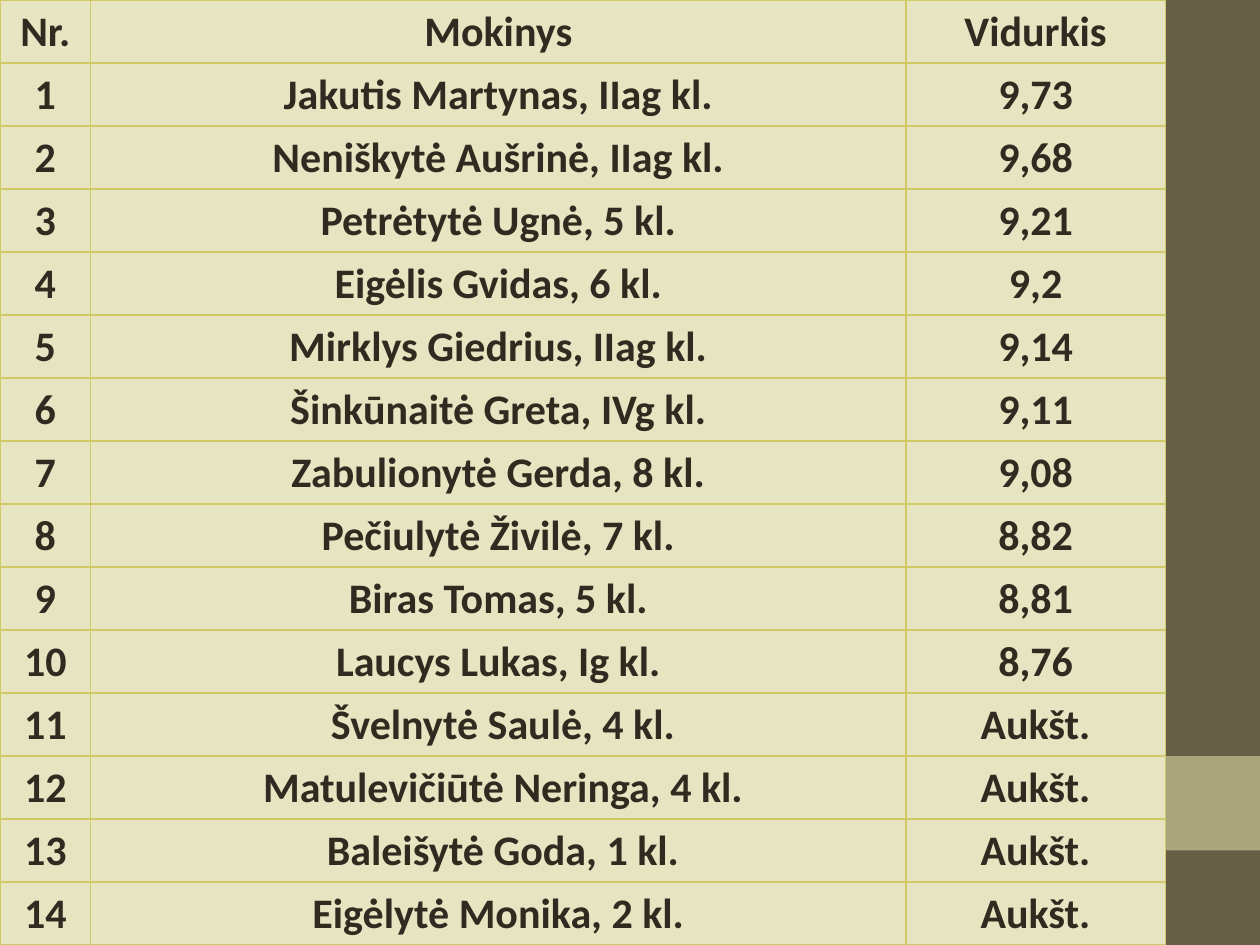
from lxml import etree
from pptx import Presentation
from pptx.dml.color import RGBColor
from pptx.enum.shapes import MSO_SHAPE
from pptx.enum.text import MSO_ANCHOR, PP_ALIGN
from pptx.oxml.ns import qn
from pptx.util import Inches, Pt

RECTANGLE = MSO_SHAPE.RECTANGLE
MIDDLE = MSO_ANCHOR.MIDDLE
CENTER = PP_ALIGN.CENTER

SLIDE_WIDTH, SLIDE_HEIGHT = 10, 7.5
BAND_WIDTH = 0.75
TABLE_WIDTH = SLIDE_WIDTH - BAND_WIDTH
COLUMN_WIDTHS = (0.72, 6.47, 2.06)

BAND, ACCENT = "675E47", "A9A57C"
CELL, GRID, INK = "E7E4C1", "D0C967", "2F2B20"

HEADINGS = ("Nr.", "Mokinys", "Vidurkis")
PUPILS = (
    ("Jakutis Martynas, IIag kl.", "9,73"),
    ("Neniškytė Aušrinė, IIag kl.", "9,68"),
    ("Petrėtytė Ugnė, 5 kl.", "9,21"),
    ("Eigėlis Gvidas, 6 kl.", "9,2"),
    ("Mirklys Giedrius, IIag kl.", "9,14"),
    ("Šinkūnaitė Greta, IVg kl.", "9,11"),
    ("Zabulionytė Gerda, 8 kl.", "9,08"),
    ("Pečiulytė Živilė, 7 kl.", "8,82"),
    ("Biras Tomas, 5 kl.", "8,81"),
    ("Laucys Lukas, Ig kl.", "8,76"),
    (" Švelnytė Saulė, 4 kl.", "Aukšt."),
    (" Matulevičiūtė Neringa, 4 kl.", "Aukšt."),
    (" Baleišytė Goda, 1 kl.", "Aukšt."),
    ("Eigėlytė Monika, 2 kl.", "Aukšt."),
)


def paint(fill, color):
    fill.solid()
    fill.fore_color.rgb = RGBColor.from_string(color)


def add_band(slide, top, height, color):
    band = slide.shapes.add_shape(
        RECTANGLE, Inches(TABLE_WIDTH), Inches(top), Inches(BAND_WIDTH), Inches(height))
    band.shadow.inherit = False
    band.line.fill.background()
    paint(band.fill, color)


def add_borders(cell, color, width):
    properties = cell._tc.get_or_add_tcPr()
    # Borders come before the fill in the cell properties
    for position, side in enumerate(("lnL", "lnR", "lnT", "lnB")):
        border = etree.Element(qn(f"a:{side}"), w=str(Pt(width)))
        solid = etree.SubElement(border, qn("a:solidFill"))
        etree.SubElement(solid, qn("a:srgbClr"), val=color)
        properties.insert(position, border)


def fill_cell(cell, text):
    cell.margin_left = cell.margin_right = cell.margin_top = Inches(0.01)
    cell.margin_bottom = 0
    cell.vertical_anchor = MIDDLE
    cell.text_frame.text = text
    paragraph = cell.text_frame.paragraphs[0]
    paragraph.alignment = CENTER
    font = paragraph.runs[0].font
    font.name, font.size, font.bold = "Calibri", Pt(24), True
    font.color.rgb = RGBColor.from_string(INK)
    paint(cell.fill, CELL)
    add_borders(cell, GRID, 1)


def add_ranking(slide, rows):
    ranking = slide.shapes.add_table(
        len(rows), len(COLUMN_WIDTHS), 0, 0, Inches(TABLE_WIDTH), Inches(SLIDE_HEIGHT)).table
    for column, width in zip(ranking.columns, COLUMN_WIDTHS):
        column.width = Inches(width)
    for row, texts in zip(ranking.rows, rows):
        row.height = Inches(SLIDE_HEIGHT / len(rows))
        for cell, text in zip(row.cells, texts):
            fill_cell(cell, text)


def main():
    deck = Presentation()
    deck.slide_width, deck.slide_height = Inches(SLIDE_WIDTH), Inches(SLIDE_HEIGHT)
    slide = deck.slides.add_slide(deck.slide_layouts[6])

    # Side band with its lighter square
    add_band(slide, 0, SLIDE_HEIGHT, BAND)
    add_band(slide, SLIDE_HEIGHT * 0.8, BAND_WIDTH, ACCENT)

    # Pupils numbered in order of their average
    numbered = [(str(number), *pupil) for number, pupil in enumerate(PUPILS, 1)]
    add_ranking(slide, [HEADINGS, *numbered])

    deck.save("out.pptx")


if __name__ == "__main__":
    main()
